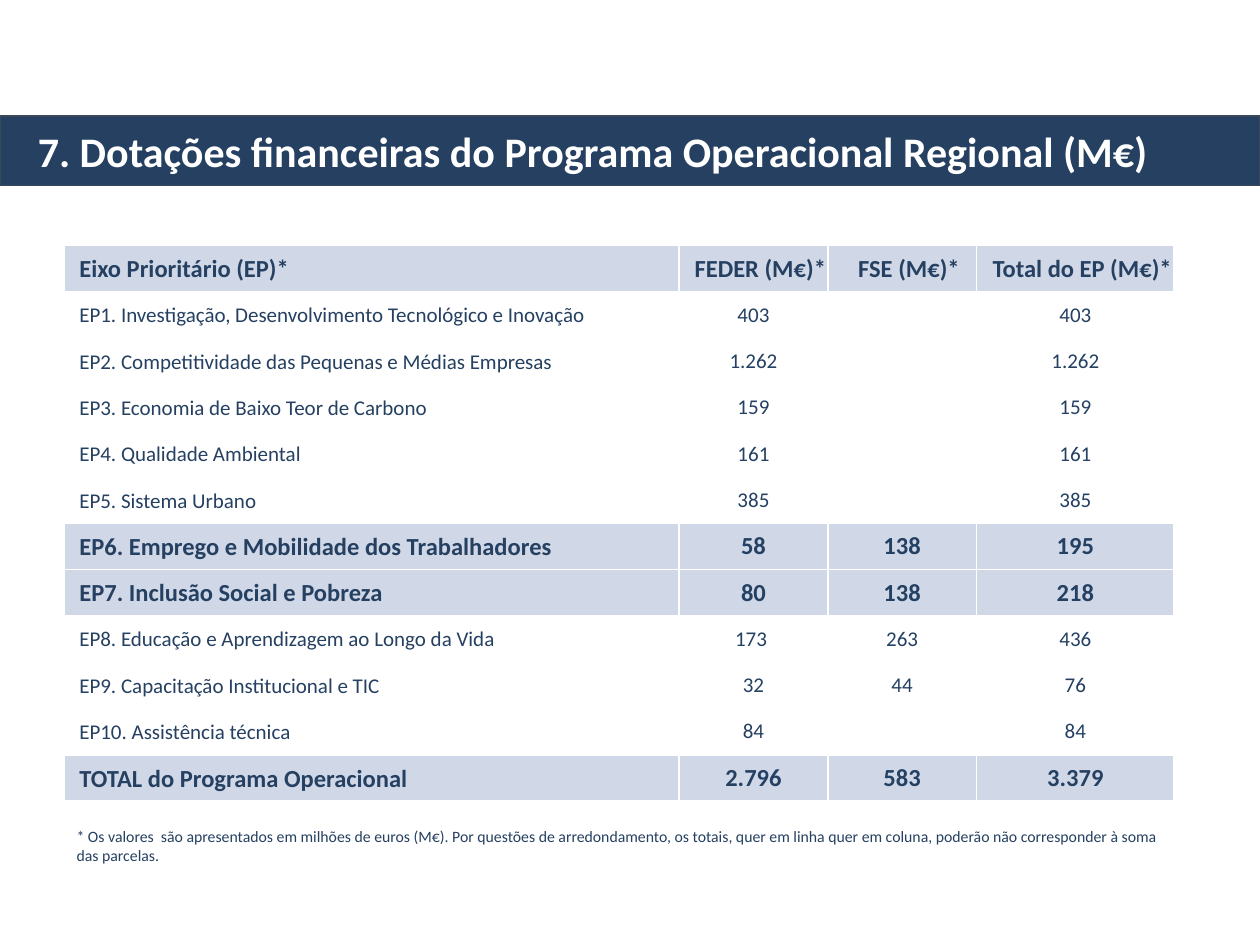
from lxml import etree
from pptx import Presentation
from pptx.dml.color import RGBColor
from pptx.enum.shapes import MSO_SHAPE
from pptx.enum.text import MSO_ANCHOR, PP_ALIGN
from pptx.oxml.ns import qn
from pptx.util import Inches, Pt

RECT = MSO_SHAPE.RECTANGLE
MIDDLE = MSO_ANCHOR.MIDDLE
LEFT, CENTER = PP_ALIGN.LEFT, PP_ALIGN.CENTER
FONT = "Calibri"
COLORS = {"navy": "254061", "value": "244062", "edge": "394959",
          "band": "D0D8E8", "white": "FFFFFF"}
WIDTHS = [4.88, 1.18, 1.18, 1.57]
STRONG = {0, 6, 7, 11}
ROWS = [
    ("Eixo Prioritário (EP)*", "FEDER (M€)*", "FSE (M€)*", "Total do EP (M€)*"),
    ("EP1. Investigação, Desenvolvimento Tecnológico e Inovação", "403", "", "403"),
    ("EP2. Competitividade das Pequenas e Médias Empresas", "1.262", "", "1.262"),
    ("EP3. Economia de Baixo Teor de Carbono", "159", "", "159"),
    ("EP4. Qualidade Ambiental", "161", "", "161"),
    ("EP5. Sistema Urbano", "385", "", "385"),
    ("EP6. Emprego e Mobilidade dos Trabalhadores", "58", "138", "195"),
    ("EP7. Inclusão Social e Pobreza", "80", "138", "218"),
    ("EP8. Educação e Aprendizagem ao Longo da Vida", "173 ", "263", "436"),
    ("EP9. Capacitação Institucional e TIC", "32", "44", "76"),
    ("EP10. Assistência técnica", "84", "", "84"),
    ("TOTAL do Programa Operacional", "2.796", "583", "3.379"),
]
NOTE = ("* Os valores  são apresentados em milhões de euros (M€). Por questões de "
        "arredondamento, os totais, quer em linha quer em coluna, poderão não "
        "corresponder à soma das parcelas.")


def color(name):
    """Return the named colour."""
    return RGBColor.from_string(COLORS[name])


def write(frame, text, size, tone, bold=False, align=LEFT):
    """Write one run in the first paragraph of a frame."""
    para = frame.paragraphs[0]
    para.alignment = align
    run = para.add_run()
    run.text = text
    font = run.font
    font.name, font.size, font.bold = FONT, Pt(size), bold
    font.color.rgb = color(tone)


def add_title(slide, left, top, width, height):
    """Place the title band."""
    band = slide.shapes.add_shape(RECT, left, top, width, height)
    band.shadow.inherit = False
    band.fill.solid()
    band.fill.fore_color.rgb = color("navy")
    band.line.color.rgb = color("edge")
    band.line.width = Pt(0.75)
    frame = band.text_frame
    frame.margin_left = Inches(0.3)
    frame.vertical_anchor = MIDDLE
    write(frame, "7. Dotações financeiras do Programa Operacional Regional (M€)",
          24, "white", True)


def add_edges(cell):
    """Give a cell thin white borders."""
    props = cell._tc.get_or_add_tcPr()
    for pos, side in enumerate(("lnL", "lnR", "lnT", "lnB")):
        line = etree.Element(qn(f"a:{side}"), w=str(Pt(1)))
        fill = etree.SubElement(line, qn("a:solidFill"))
        etree.SubElement(fill, qn("a:srgbClr"), val=COLORS["white"])
        props.insert(pos, line)


def fill_cell(cell, text, row, col):
    """Style a cell by its place and write its text."""
    strong = row in STRONG
    label = row == 0 or col == 0
    pads = (0.12, 0.01, 0.01, 0) if label else (0, 0, 0, 0)
    (cell.margin_left, cell.margin_top,
     cell.margin_right, cell.margin_bottom) = map(Inches, pads)
    cell.vertical_anchor = MIDDLE
    if strong:
        cell.fill.solid()
        cell.fill.fore_color.rgb = color("band")
    else:
        cell.fill.background()
    add_edges(cell)
    if text:
        write(cell.text_frame, text, 14 if strong else 12,
              "navy" if label else "value", strong, CENTER if col else LEFT)


def add_grid(slide, left, top, width, height):
    """Place the table of funds by axis."""
    table = slide.shapes.add_table(len(ROWS), len(WIDTHS), left, top,
                                   width, height).table
    table.horz_banding = False
    for col, size in zip(table.columns, WIDTHS):
        col.width = Inches(size)
    for row, texts in enumerate(ROWS):
        for col, text in enumerate(texts):
            fill_cell(table.cell(row, col), text, row, col)


def add_note(slide, left, top, width, height):
    """Place the footnote."""
    frame = slide.shapes.add_textbox(left, top, width, height).text_frame
    frame.word_wrap = True
    write(frame, NOTE, 9, "navy")


def main():
    """Build and save the slide."""
    deck = Presentation()
    deck.slide_width, deck.slide_height = Inches(10), Inches(7.5)
    slide = deck.slides.add_slide(deck.slide_layouts[6])
    add_title(slide, 0, Inches(0.92), deck.slide_width, Inches(0.55))
    add_grid(slide, Inches(0.51), Inches(1.95), Inches(8.82), Inches(4.41))
    add_note(slide, Inches(0.51), Inches(6.51), Inches(8.8), Inches(0.4))
    deck.save("out.pptx")


if __name__ == "__main__":
    main()
